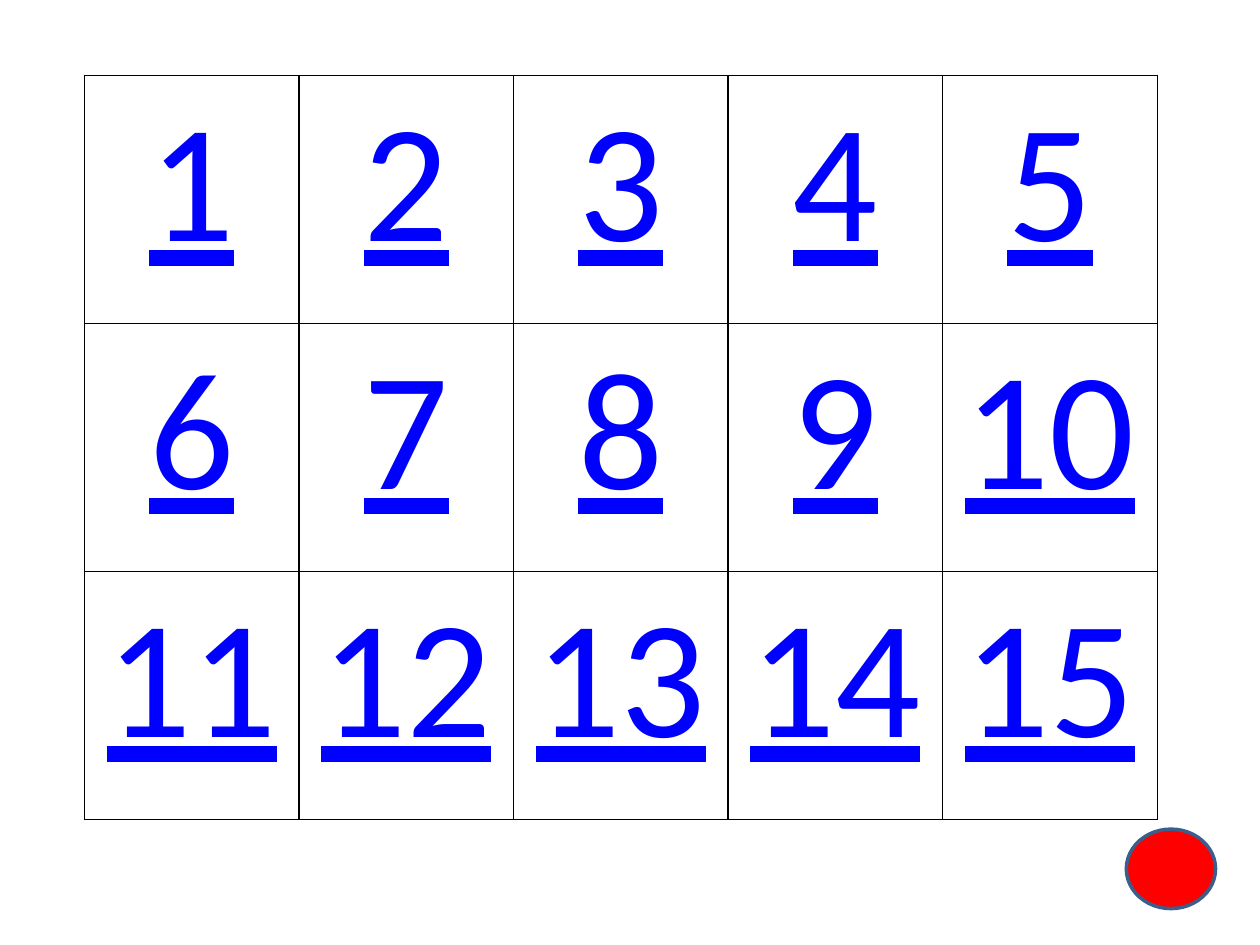
from lxml.etree import SubElement
from pptx import Presentation
from pptx.dml.color import RGBColor
from pptx.enum.shapes import MSO_SHAPE as Shape
from pptx.enum.text import MSO_ANCHOR as Anchor, PP_ALIGN as Align
from pptx.oxml.ns import qn
from pptx.util import Pt

COLORS = {"number": "0000FF", "grid": "000000", "button": "FF0000", "outline": "3A5F8C"}
NUMBER_FONT = {"name": "Calibri", "size": Pt(96), "underline": True}
ROWS, COLUMNS = 3, 5


def color(name):
    return RGBColor.from_string(COLORS[name])


def add_borders(cell, width):
    properties = cell._tc.get_or_add_tcPr()
    for position, side in enumerate(("lnL", "lnR", "lnT", "lnB")):
        line = properties.makeelement(qn(f"a:{side}"), {"w": str(Pt(width))})
        fill = SubElement(line, qn("a:solidFill"))
        SubElement(fill, qn("a:srgbClr"), val=COLORS["grid"])
        properties.insert(position, line)


def add_number_grid(slide, left, top, width, height):
    frame = slide.shapes.add_table(ROWS, COLUMNS, Pt(left), Pt(top), Pt(width), Pt(height))
    table = frame.table
    table.first_row = table.horz_banding = False
    for column in table.columns:
        column.width = Pt(width / COLUMNS)
    for row in table.rows:
        row.height = Pt(height / ROWS)

    # Numbers run across each row in turn
    for number, cell in enumerate(table.iter_cells(), start=1):
        cell.fill.background()
        cell.vertical_anchor = Anchor.TOP
        add_borders(cell, 1)
        paragraph = cell.text_frame.paragraphs[0]
        paragraph.alignment = Align.CENTER
        run = paragraph.add_run()
        run.text = str(number)
        for name, value in NUMBER_FONT.items():
            setattr(run.font, name, value)
        run.font.color.rgb = color("number")


def add_button(slide, left, top, width, height):
    button = slide.shapes.add_shape(Shape.OVAL, Pt(left), Pt(top), Pt(width), Pt(height))
    button.shadow.inherit = False
    button.fill.solid()
    button.fill.fore_color.rgb = color("button")
    button.line.color.rgb = color("outline")
    button.line.width = Pt(2)


def main():
    presentation = Presentation()
    presentation.slide_width, presentation.slide_height = Pt(720), Pt(540)
    slide = presentation.slides.add_slide(presentation.slide_layouts[6])
    add_number_grid(slide, 48.2, 43, 613.2, 425.4)
    add_button(slide, 643.6, 473.8, 51, 45.4)
    presentation.save("out.pptx")


if __name__ == "__main__":
    main()
